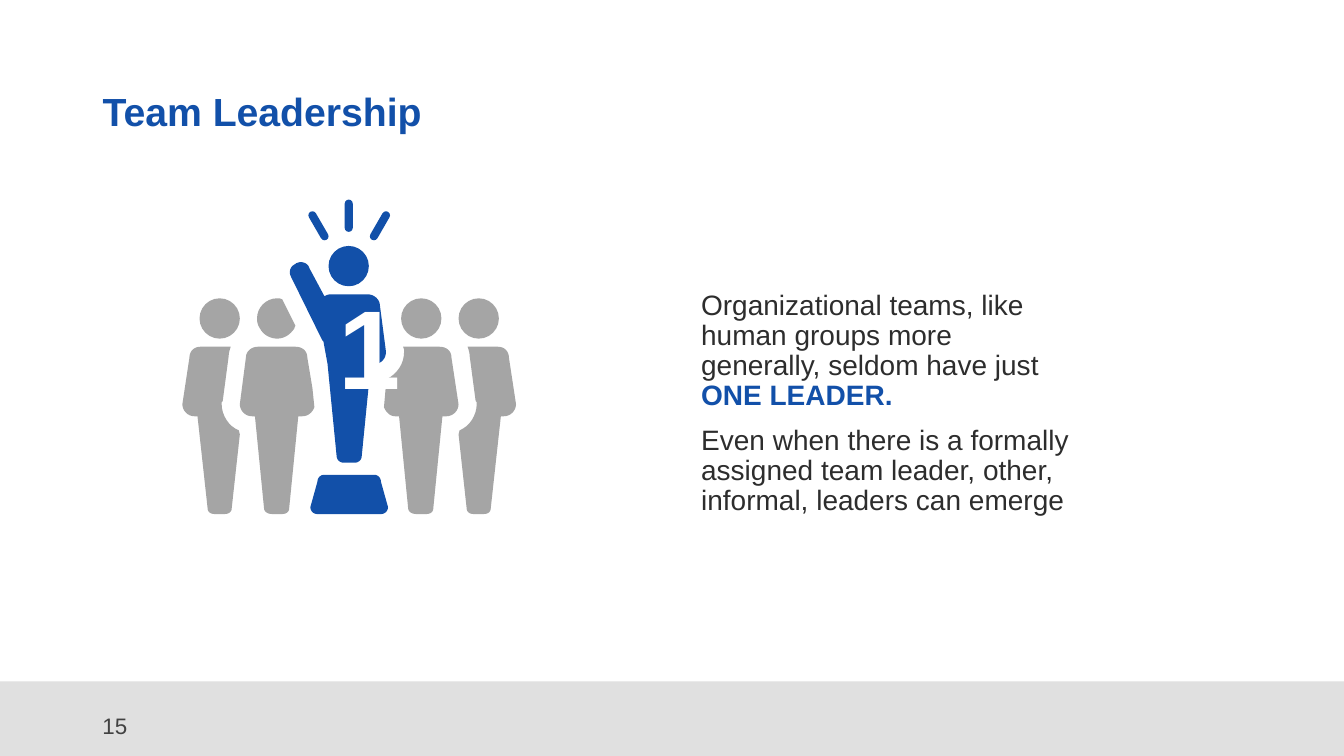
"""Build the Team Leadership slide."""
from pptx import Presentation
from pptx.dml.color import RGBColor
from pptx.enum.shapes import MSO_SHAPE as SHAPE
from pptx.enum.text import MSO_ANCHOR as ANCHOR, PP_ALIGN as ALIGN
from pptx.util import Cm, Pt

COLORS = {"blue": "1250A9", "gray": "A5A5A5", "band": "E0E0E0",
          "text": "2D2D2D", "number": "424242", "white": "FFFFFF"}
UNIT = Cm(0.0254)
MIRROR = 693


def write(p, text, size=20, color="text", bold=False):
    r = p.add_run()
    r.text = text
    r.font.name, r.font.size, r.font.bold = "Arial", Pt(size), bold
    r.font.color.rgb = RGBColor.from_string(COLORS[color])


def paint(sp, color):
    sp.fill.solid()
    sp.fill.fore_color.rgb = RGBColor.from_string(COLORS[color])
    sp.line.fill.background()
    sp.shadow.inherit = False


prs = Presentation()
prs.slide_width, prs.slide_height = Cm(33.87), Cm(19.05)
s = prs.slides.add_slide(prs.slide_layouts[5])

band = s.shapes.add_shape(SHAPE.RECTANGLE, 0, Cm(17.17), prs.slide_width, Cm(1.88))
paint(band, "band")

title = s.shapes.title
title.left, title.top, title.width, title.height = Cm(2.33), Cm(1.02), Cm(29.21), Cm(3.68)
tf = title.text_frame
tf.word_wrap, tf.vertical_anchor = True, ANCHOR.MIDDLE
p = tf.paragraphs[0]
p.alignment, p.line_spacing = ALIGN.LEFT, 0.9
write(p, "Team Leadership", size=28, color="blue", bold=True)

body = s.shapes.add_textbox(Cm(17.42), Cm(7.21), Cm(9.78), Cm(6.17))
tf = body.text_frame
tf.word_wrap = True
p = tf.paragraphs[0]
p.line_spacing = 0.9
write(p, "Organizational teams, like human groups more generally, seldom have just ")
write(p, "ONE LEADER.", color="blue", bold=True)
p = tf.add_paragraph()
p.line_spacing, p.space_before = 0.9, Pt(10)
write(p, "Even when there is a formally assigned team leader, other, informal, leaders can emerge")

number = s.shapes.add_textbox(Cm(2.33), Cm(17.78), Cm(7.62), Cm(1.02))
tf = number.text_frame
tf.word_wrap, tf.vertical_anchor = True, ANCHOR.MIDDLE
write(tf.paragraphs[0], "15", size=16, color="number")

# Each outline lists points; six numbers make a cubic curve.
outer_body = [(220, 401), (220, 399), (221, 398), (227, 353), (227, 350, 228, 347, 229, 344),
              (199, 344), (193, 344, 188, 348, 188, 355), (181, 401),
              (181, 407, 186, 413, 193, 413), (196, 413), (206, 504),
              (206, 508, 209, 510, 213, 510), (223, 510), (227, 510, 230, 508, 230, 504),
              (238, 431), (237, 427), (227, 423, 220, 412, 220, 401)]
left_body = [(312, 404), (310, 385), (305, 355), (305, 348, 300, 344, 293, 344), (256, 344),
             (250, 344, 244, 348, 244, 355), (238, 401), (238, 407, 243, 413, 250, 413),
             (253, 413), (262, 504), (262, 508, 266, 510, 270, 510), (280, 510),
             (284, 510, 287, 508, 287, 504), (296, 413), (300, 413),
             (306, 413, 310, 409, 312, 404)]
right_body = [(436, 344), (400, 344), (401, 347), (401, 349), (401, 361, 394, 371, 384, 376),
              (383, 382), (381, 404), (383, 409, 387, 413, 392, 413), (396, 413), (405, 504),
              (405, 508, 409, 510, 413, 510), (423, 510), (427, 510, 430, 508, 430, 504),
              (439, 413), (443, 413), (450, 413, 455, 407, 455, 401), (448, 355),
              (448, 348, 443, 344, 436, 344)]
cut_head = [(275, 336), (282, 336, 288, 332, 292, 326), (292, 325, 293, 324, 293, 323),
            (280, 297), (278, 296, 277, 296, 275, 296), (264, 296, 255, 305, 255, 316),
            (255, 320, 256, 323, 258, 326), (261, 332, 268, 336, 275, 336)]
leader_body = [(320, 338), (321, 338, 321, 339, 321, 339), (325, 361), (334, 452),
               (334, 456, 337, 459, 341, 459), (352, 459), (356, 459, 359, 456, 359, 452),
               (368, 361), (372, 361), (378, 361, 383, 356, 383, 349), (377, 303),
               (377, 297, 371, 292, 365, 292), (328, 292), (326, 292, 323, 293, 322, 294),
               (307, 266), (306, 262, 302, 260, 298, 260), (297, 260, 295, 261, 294, 261),
               (293, 262), (288, 264, 286, 270, 289, 275)]
podium = [(371, 471), (322, 471), (318, 471, 315, 474, 315, 478), (308, 503),
          (308, 507, 311, 510, 315, 510), (378, 510), (382, 510, 385, 507, 385, 503),
          (378, 478), (378, 474, 375, 471, 371, 471)]

team = s.shapes.add_group_shape().shapes
for outline, color, mirrored in [
        (outer_body, "gray", False), (outer_body, "gray", True), (left_body, "gray", False),
        (right_body, "gray", False), (cut_head, "gray", False),
        (leader_body, "blue", False), (podium, "blue", False)]:
    points = []
    for step in outline:
        if len(step) == 2:
            points.append(step)
            continue
        x0, y0 = points[-1]
        x1, y1, x2, y2, x3, y3 = step
        for t in (i / 8 for i in range(1, 9)):
            a, b, c, d = (1 - t) ** 3, 3 * t * (1 - t) ** 2, 3 * t * t * (1 - t), t ** 3
            points.append((a * x0 + b * x1 + c * x2 + d * x3, a * y0 + b * y1 + c * y2 + d * y3))
    points = [((MIRROR - x if mirrored else x) * UNIT, y * UNIT) for x, y in points]
    fb = team.build_freeform(*points[0])
    fb.add_line_segments(points[1:])
    paint(fb.convert_to_shape(), color)

for x, y, color in [(198, 296, "gray"), (398, 296, "gray"), (455, 296, "gray"), (326, 244, "blue")]:
    paint(team.add_shape(SHAPE.OVAL, x * UNIT, y * UNIT, 40 * UNIT, 40 * UNIT), color)

for x, y, angle in [(312, 208, -30), (342, 198, 0), (373, 208, 30)]:
    ray = team.add_shape(SHAPE.ROUNDED_RECTANGLE, x * UNIT, y * UNIT, 8 * UNIT, 32 * UNIT)
    ray.adjustments[0] = 0.5
    ray.rotation = angle
    paint(ray, "blue")

rank = team.add_textbox(Cm(8.28), Cm(6.88), Cm(1.07), Cm(3.68))
tf = rank.text_frame
tf.word_wrap = True
p = tf.paragraphs[0]
p.alignment = ALIGN.CENTER
write(p, "1", size=80, color="white", bold=True)

prs.save("out.pptx")
